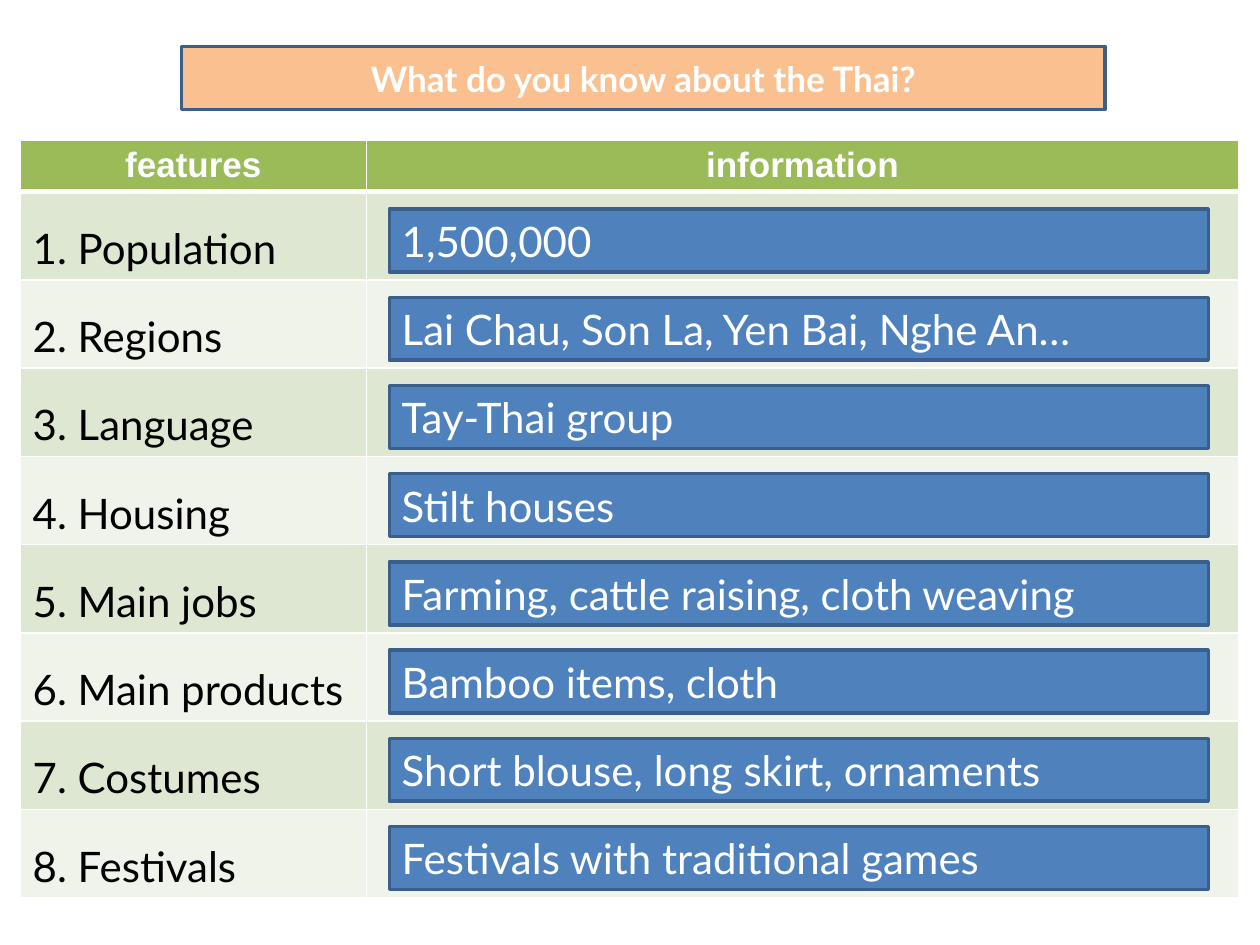
from lxml import etree
from pptx import Presentation
from pptx.dml.color import RGBColor
from pptx.enum import shapes, text
from pptx.oxml import ns
from pptx.util import Inches, Pt

HUES = {
    "white": "FFFFFF", "black": "000000", "head": "9BBB59",
    "odd": "DEE7D1", "even": "EFF3EA",
    "title": "FAC090", "bar": "4F81BD", "edge": "3A5F8C",
}
FACTS = [
    ("1. Population", "1,500,000"),
    ("2. Regions", "Lai Chau, Son La, Yen Bai, Nghe An…"),
    ("3. Language", "Tay-Thai group"),
    ("4. Housing", "Stilt houses"),
    ("5. Main jobs", "Farming, cattle raising, cloth weaving"),
    ("6. Main products", "Bamboo items, cloth"),
    ("7. Costumes", "Short blouse, long skirt, ornaments"),
    ("8. Festivals", "Festivals with traditional games"),
]
TITLE = {"name": "Lato", "size": Pt(20), "bold": True}
HEAD = {"name": "Arial", "size": Pt(20), "bold": True}
BODY = {"name": "Lato", "size": Pt(24), "bold": False}
MID = {"alignment": text.PP_ALIGN.CENTER}
LEFT = {"alignment": text.PP_ALIGN.LEFT}
LOOSE = {"line_spacing": 1.5}
TOP, ROW = 0.41, 0.7


def tint(name):
    """Return the named colour."""
    return RGBColor.from_string(HUES[name])


def write(frame, words, font, para, hue):
    """Put one styled line of words in a text frame."""
    line = frame.paragraphs[0]
    run = line.add_run()
    run.text = words
    for part, look in ((run.font, font), (line, para)):
        for key, value in look.items():
            setattr(part, key, value)
    run.font.color.rgb = tint(hue)


def paint(cell, hue, base):
    """Fill a cell and give it white borders, the bottom one base points wide."""
    cell.fill.solid()
    cell.fill.fore_color.rgb = tint(hue)
    props = cell._tc.get_or_add_tcPr()
    for spot, side in enumerate("LRTB"):
        edge = etree.Element(ns.qn("a:ln" + side))
        edge.set("w", str(Pt(base if side == "B" else 1)))
        fill = etree.SubElement(edge, ns.qn("a:solidFill"))
        etree.SubElement(fill, ns.qn("a:srgbClr")).set("val", HUES["white"])
        props.insert(spot, edge)


def add_bar(slide, box, words, fill, font, para):
    """Draw an outlined bar with one line of white text."""
    bar = slide.shapes.add_shape(shapes.MSO_SHAPE.RECTANGLE, *map(Inches, box))
    bar.shadow.inherit = False
    bar.fill.solid()
    bar.fill.fore_color.rgb = tint(fill)
    bar.line.color.rgb = tint("edge")
    bar.line.width = Pt(2)
    bar.text_frame.word_wrap = True
    bar.text_frame.vertical_anchor = text.MSO_ANCHOR.MIDDLE
    write(bar.text_frame, words, font, para, "white")


def add_grid(slide, box):
    """Draw the table of features with an empty information column."""
    grid = slide.shapes.add_table(len(FACTS) + 1, 2, *map(Inches, box)).table
    for col, wide in zip(grid.columns, (2.75, box[2] - 2.75)):
        col.width = Inches(wide)
    for i, row in enumerate(grid.rows):
        row.height = Inches(ROW if i else TOP)
        hue = ("even", "odd")[i % 2] if i else "head"
        for cell in row.cells:
            paint(cell, hue, 1 if i else 3)
    for col, words in enumerate(("features", "information")):
        write(grid.cell(0, col).text_frame, words, HEAD, MID, "white")
    for i, (name, _) in enumerate(FACTS, 1):
        write(grid.cell(i, 0).text_frame, name, BODY, LOOSE, "black")


def add_facts(slide, box):
    """Lay the answer bars down the box, one to a table row."""
    left, top, wide, high = box
    for i, (_, fact) in enumerate(FACTS):
        spot = (left, top + i * ROW, wide, high)
        add_bar(slide, spot, fact, "bar", BODY, LEFT)


def main():
    """Build and save the slide."""
    deck = Presentation()
    deck.slide_width, deck.slide_height = Inches(10), Inches(7.5)
    slide = deck.slides.add_slide(deck.slide_layouts[6])
    add_grid(slide, (0.16, 1.11, 9.67, TOP + ROW * len(FACTS)))
    ask = "What do you know about the Thai?"
    add_bar(slide, (1.44, 0.37, 7.33, 0.5), ask, "title", TITLE, MID)
    add_facts(slide, (3.09, 1.66, 6.5, 0.5))
    deck.save("out.pptx")


if __name__ == "__main__":
    main()
